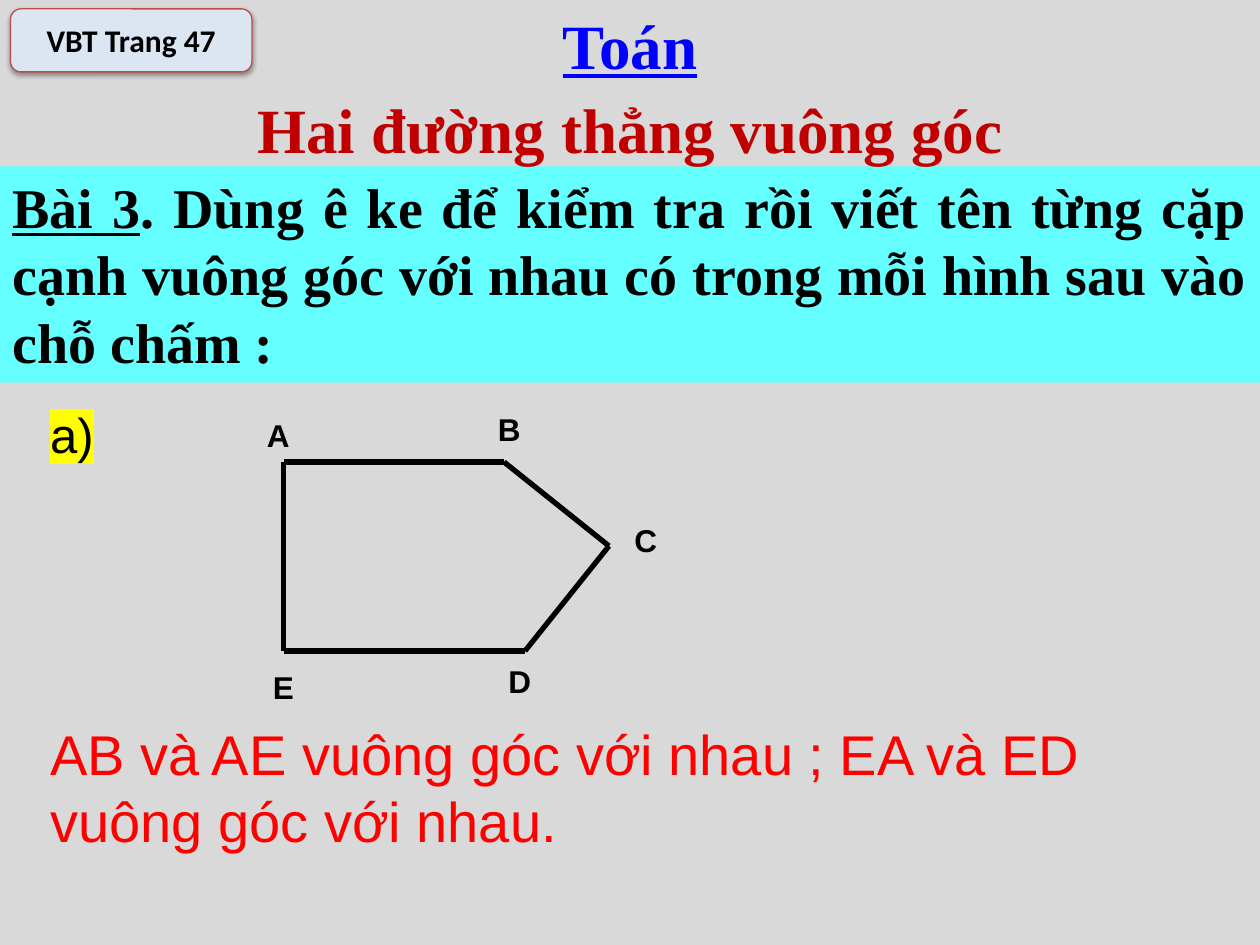
"""Build a maths slide on perpendicular lines with a labelled pentagon."""
from lxml.etree import SubElement
from pptx import Presentation
from pptx.dml.color import RGBColor
from pptx.enum.shapes import MSO_CONNECTOR as Link, MSO_SHAPE as Shape
from pptx.enum.text import MSO_ANCHOR as Anchor, PP_ALIGN as Align
from pptx.oxml.ns import qn
from pptx.util import Inches, Pt

COLORS = {
    "page": "D9D9D9", "band": "66FFFF", "badge": "DCE6F2", "edge": "BF4C48",
    "ink": "000000", "blue": "0000FF", "crimson": "C00000", "red": "FF0000",
    "marker": "FFFF00",
}
SERIF, SANS, BADGE_FONT = "Times New Roman", "Arial", "Calibri"
WIDTH, HEIGHT = Inches(10), Inches(7.5)
COLUMNS, ROWS = 120, 90

SUBJECT = "Toán"
LESSON = "Hai đường thẳng vuông góc"
PAGE_REF = "VBT Trang 47"
TASK = ("Bài 3", ". Dùng ê ke để kiểm tra rồi viết tên từng cặp cạnh vuông góc "
        "với nhau có trong mỗi hình sau vào chỗ chấm :")
PART = "a)"
ANSWER = "AB và AE vuông góc với nhau ; EA và ED vuông góc với nhau."

VERTICES = {"A": (27, 44), "B": (48, 44), "C": (58, 52), "D": (50, 62),
            "E": (27, 62), "M": (48, 62)}
SIDES = ("EM", "AB", "EA", "ED", "BC", "DC")
LABELS = {"A": (24, 39), "B": (46, 38.5), "C": (59, 49), "D": (47, 62.5),
          "E": (24.5, 63)}
LABEL_SIZE = (5, 4.8)


def color(name):
    return RGBColor.from_string(COLORS[name])


def place(column, row):
    return round(WIDTH * column / COLUMNS), round(HEIGHT * row / ROWS)


def area(left, top, width, height):
    return *place(left, top), *place(width, height)


def write(box, *parts, size, font, ink="ink", bold=False, underlined=0,
          align=Align.LEFT, anchor=Anchor.TOP, marker=None):
    """Write the parts as one paragraph, underlining the first few."""
    frame = box.text_frame
    frame.word_wrap = True
    frame.vertical_anchor = anchor
    paragraph = frame.paragraphs[0]
    paragraph.alignment = align
    for index, part in enumerate(parts):
        run = paragraph.add_run()
        run.text = part
        style = run.font
        style.size, style.name, style.bold = Pt(size), font, bold
        style.underline = index < underlined
        style.color.rgb = color(ink)
        if marker:
            props = run._r.get_or_add_rPr()
            highlight = SubElement(props, qn("a:highlight"))
            SubElement(highlight, qn("a:srgbClr"), val=COLORS[marker])
            props.find(qn("a:solidFill")).addnext(highlight)


def panel(shapes, kind, bounds, fill):
    shape = shapes.add_shape(kind, *area(*bounds))
    shape.shadow.inherit = False
    shape.fill.solid()
    shape.fill.fore_color.rgb = color(fill)
    shape.line.fill.background()
    return shape


def cast_shadow(shape):
    effects = shape._element.spPr.find(qn("a:effectLst"))
    shadow = SubElement(effects, qn("a:outerShdw"), blurRad=str(Pt(3.1)),
                        dist=str(Pt(1.6)), dir="5400000", rotWithShape="0")
    tint = SubElement(shadow, qn("a:srgbClr"), val=COLORS["ink"])
    SubElement(tint, qn("a:alpha"), val="38000")


def draw_pentagon(shapes):
    for start, end in SIDES:
        side = shapes.add_connector(Link.STRAIGHT, *place(*VERTICES[start]),
                                    *place(*VERTICES[end]))
        side.line.color.rgb = color("ink")
        side.line.width = Pt(3)
        SubElement(side._element.spPr, qn("a:effectLst"))
    for letter, corner in LABELS.items():
        write(shapes.add_textbox(*area(*corner, *LABEL_SIZE)), letter,
              size=18, font=SANS, bold=True, align=Align.CENTER)


def main():
    deck = Presentation()
    deck.slide_width, deck.slide_height = WIDTH, HEIGHT
    slide = deck.slides.add_slide(deck.slide_layouts[6])
    slide.background.fill.solid()
    slide.background.fill.fore_color.rgb = color("page")
    shapes = slide.shapes

    heading = dict(size=36, font=SERIF, bold=True, align=Align.CENTER)
    write(shapes.add_textbox(*area(0, 0, COLUMNS, 8.5)), SUBJECT,
          ink="blue", underlined=1, **heading)

    band = panel(shapes, Shape.RECTANGLE, (0, 15.85, COLUMNS, 20.6), "band")
    write(band, *TASK, size=32, font=SERIF, bold=True, underlined=1,
          align=Align.JUSTIFY)

    badge = panel(shapes, Shape.ROUNDED_RECTANGLE, (1, 0.85, 23, 6), "badge")
    badge.line.color.rgb = color("edge")
    badge.line.width = Pt(0.75)
    cast_shadow(badge)
    write(badge, PAGE_REF, size=18, font=BADGE_FONT, bold=True,
          align=Align.CENTER, anchor=Anchor.MIDDLE)

    write(shapes.add_textbox(*area(0, 8, COLUMNS, 8.5)), LESSON,
          ink="crimson", **heading)
    draw_pentagon(shapes.add_group_shape().shapes)
    write(shapes.add_textbox(*area(3.6, 37.9, 7.3, 6.8)), PART,
          size=28, font=SANS, marker="marker")
    write(shapes.add_textbox(*area(3.6, 67.9, 113, 14.2)), ANSWER,
          size=32, font=SANS, ink="red")
    deck.save("out.pptx")


if __name__ == "__main__":
    main()
